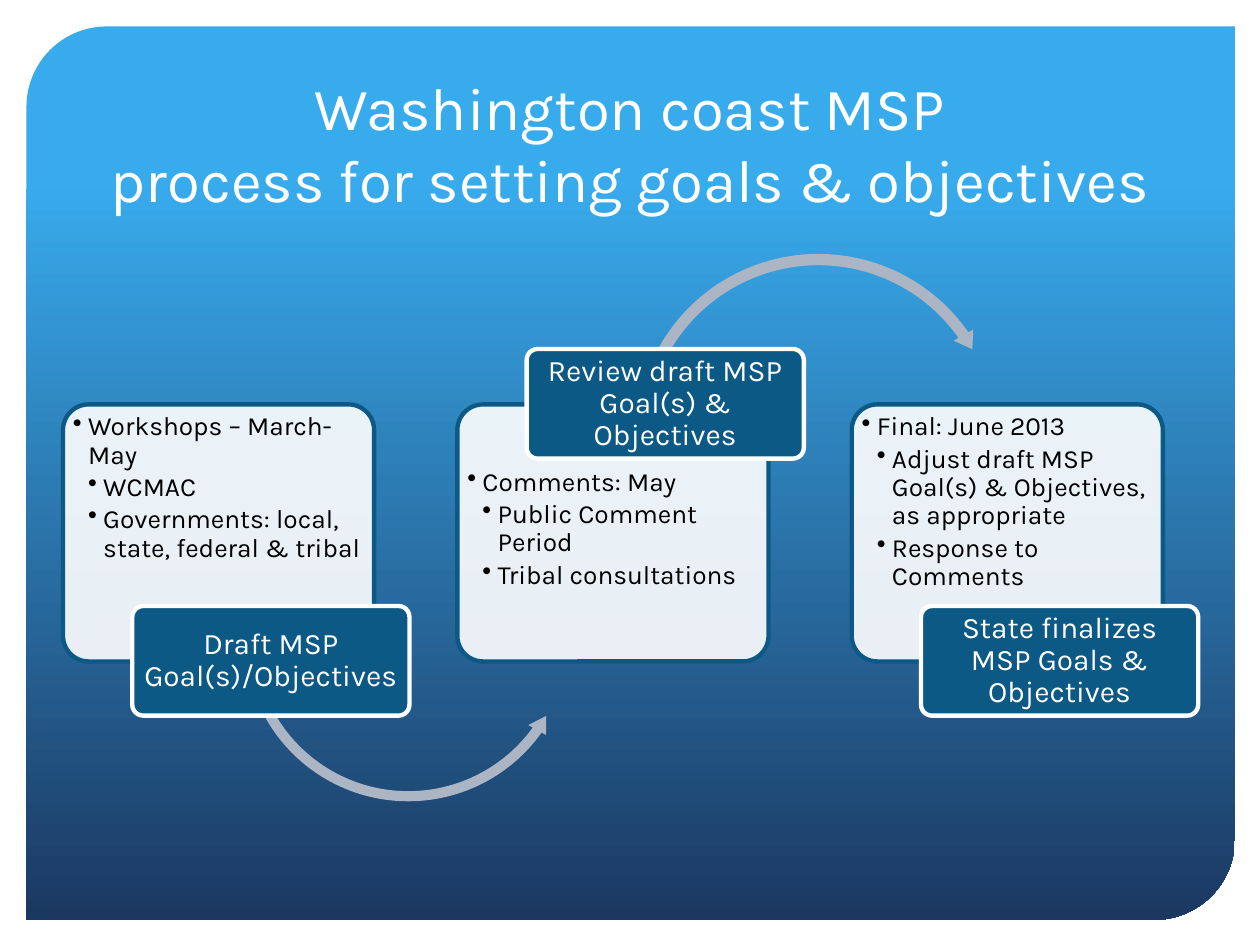
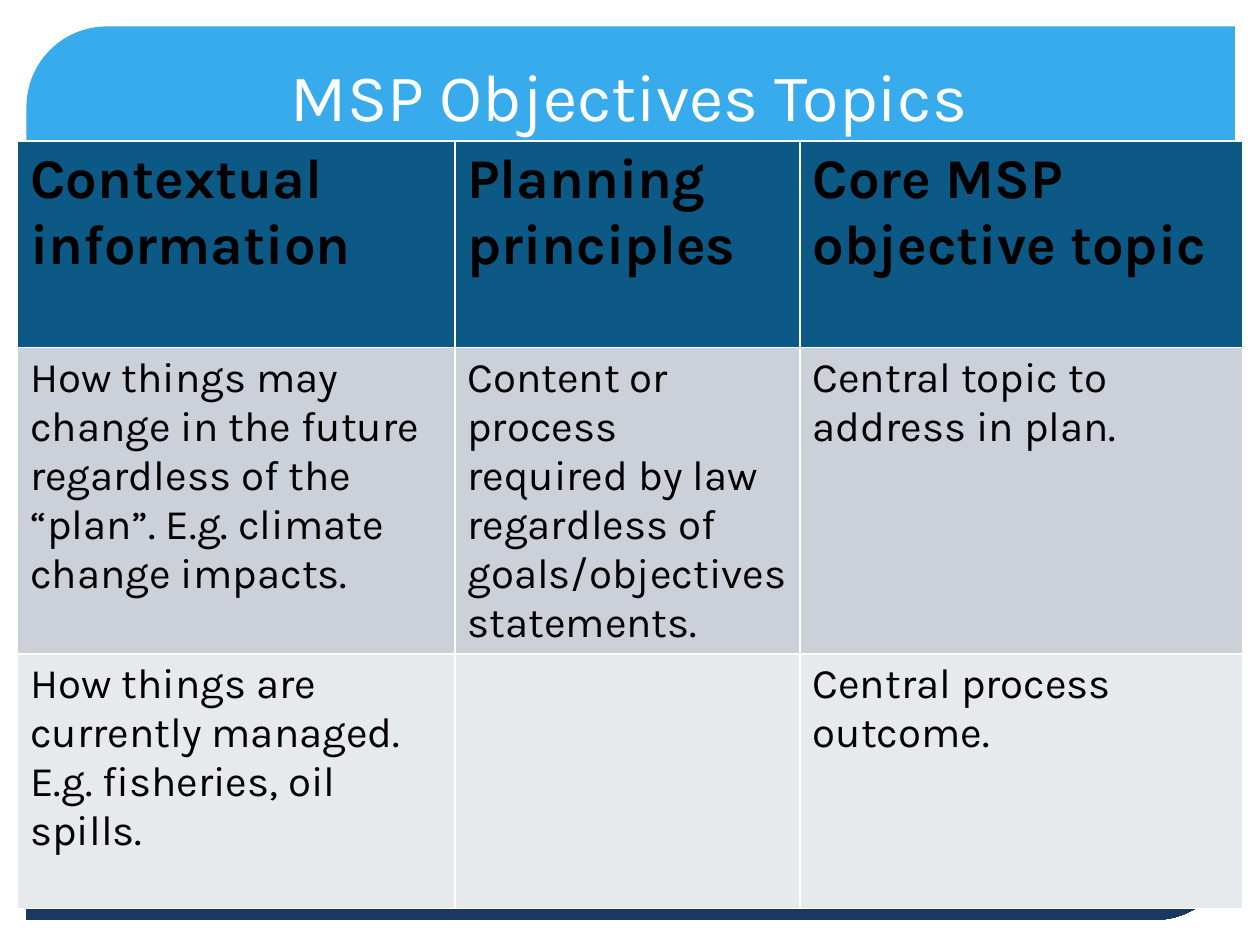
from pptx import Presentation
from pptx.dml.color import RGBColor
from pptx.enum.shapes import MSO_SHAPE
from pptx.enum.text import MSO_ANCHOR, MSO_AUTO_SIZE, PP_ALIGN
from pptx.oxml.ns import qn
from pptx.util import Pt
from lxml import etree

PX = 9144  # one px is a hundredth of an inch
FONT = "Karla"
WHITE = RGBColor(0xFF, 0xFF, 0xFF)
BLACK = RGBColor(0x00, 0x00, 0x00)
SKY = RGBColor(0x38, 0xAB, 0xED)
NAVY = RGBColor(0x1B, 0x38, 0x61)
TEAL = RGBColor(0x0C, 0x59, 0x86)
ARROW_GREY = RGBColor(0xAB, 0xB5, 0xC3)
ROW_DARK = RGBColor(0xCC, 0xD1, 0xD9)
ROW_LIGHT = RGBColor(0xE7, 0xEA, 0xED)

ROUNDED = MSO_SHAPE.ROUNDED_RECTANGLE
DIAGONAL_ROUNDED = MSO_SHAPE.ROUND_2_DIAG_RECTANGLE
LEFT_ARC = MSO_SHAPE.LEFT_CIRCULAR_ARROW
RIGHT_ARC = MSO_SHAPE.CIRCULAR_ARROW
TOP, MIDDLE, BOTTOM = MSO_ANCHOR.TOP, MSO_ANCHOR.MIDDLE, MSO_ANCHOR.BOTTOM
LEFT, CENTER = PP_ALIGN.LEFT, PP_ALIGN.CENTER
NO_AUTOFIT = MSO_AUTO_SIZE.NONE


def format_text(paragraph, size, color, bold=False, **layout):
    for name, value in layout.items():
        setattr(paragraph, name, value)
    font = paragraph.font
    for name, value in {"name": FONT, "size": Pt(size), "bold": bold}.items():
        setattr(font, name, value)
    font.color.rgb = color


def add_shape(slide, preset, box, adjustments, fill, line=None):
    shape = slide.shapes.add_shape(preset, *(n * PX for n in box))
    shape.shadow.inherit = False
    for index, value in enumerate(adjustments):
        shape.adjustments[index] = value
    shape.fill.solid()
    shape.fill.fore_color.rgb = fill
    if line is None:
        shape.line.fill.background()
    else:
        shape.line.color.rgb = line
        shape.line.width = Pt(2.5)
    return shape


prs = Presentation()
prs.slide_width, prs.slide_height = 1000 * PX, 750 * PX
title_only = prs.slide_layouts[5]

# Slides and their titles
titles = [
    ("Washington coast MSP\vprocess for setting goals & objectives", (50, 17, 900, 158), 34.2),
    ("MSP Objectives Topics", (85, 15, 829, 97), 38),
]
for heading, box, size in titles:
    title = prs.slides.add_slide(title_only).shapes.title
    for name, value in zip(("left", "top", "width", "height"), box):
        setattr(title, name, value * PX)
    title.text = heading
    frame_format = {"auto_size": NO_AUTOFIT, "vertical_anchor": BOTTOM, "word_wrap": True}
    for name, value in frame_format.items():
        setattr(title.text_frame, name, value)
    format_text(title.text_frame.paragraphs[0], size, WHITE, alignment=CENTER)
process_slide, topics_slide = prs.slides

# Gradient panel, moved to the master so that both slides share it
panel = add_shape(process_slide, DIAGONAL_ROUNDED, (21, 21, 959, 709), (0.09, 0), SKY)
panel.fill.gradient()
panel.fill.gradient_angle = 270
for stop, position, color in zip(panel.fill.gradient_stops, (0.17, 1), (SKY, NAVY)):
    stop.position = position
    stop.color.rgb = color
prs.slide_master.shapes.element.insert(2, panel.element)

# Process steps: card with bullets, arrow to the next step, label
steps = [
    ("Draft MSP Goal(s)/Objectives",
     ["Workshops – March-May", "WCMAC", "Governments: local, state, federal & tribal"],
     (LEFT_ARC, (190, 372, 268, 268), (0.03, 3.64, 21.39, 90.25, 0.03))),
    ("Review draft MSP Goal(s) & Objectives",
     ["Comments: May", "Public Comment Period", "Tribal consultations"],
     (RIGHT_ARC, (500, 197, 299, 299), (0.03, 3.23, 195.02, 125.76, 0.03))),
    ("State finalizes MSP Goals & Objectives",
     ["Final: June 2013", "Adjust draft MSP Goal(s) & Objectives, as appropriate",
      "Response to Comments"],
     None),
]
STEP_PITCH = 313
BULLET_INDENT = 12
for number, (label_text, points, arrow) in enumerate(steps):
    card_left = 50 + number * STEP_PITCH
    label_on_top = number % 2 == 1

    card = add_shape(process_slide, ROUNDED, (card_left, 321, 247, 204), (0.1,), WHITE, TEAL)
    card_color = next(card.element.iter(qn("a:srgbClr")))
    etree.SubElement(card_color, qn("a:alpha"), val="90000")
    frame = card.text_frame
    card_format = {
        "word_wrap": True, "vertical_anchor": TOP, "margin_left": 2 * PX,
        "margin_right": PX, "margin_top": (45 if label_on_top else 1) * PX, "margin_bottom": 0,
    }
    for name, value in card_format.items():
        setattr(frame, name, value)
    frame.text = "\n".join(points)
    for index, paragraph in enumerate(frame.paragraphs):
        level = min(index, 1)
        properties = paragraph._p.get_or_add_pPr()
        properties.set("marL", str((level + 1) * BULLET_INDENT * PX))
        properties.set("indent", str(-BULLET_INDENT * PX))
        etree.SubElement(properties, qn("a:buChar"), char="•")
        format_text(paragraph, 15, BLACK, level=level, alignment=LEFT,
                    line_spacing=0.9, space_after=Pt(2.25))

    if arrow:
        add_shape(process_slide, *arrow, ARROW_GREY)

    label_top = 277 if label_on_top else 481
    label = add_shape(process_slide, ROUNDED, (card_left + 55, label_top, 220, 87),
                      (0.1,), TEAL, WHITE)
    label_format = {
        "word_wrap": True, "vertical_anchor": MIDDLE, "margin_left": 4 * PX,
        "margin_right": 4 * PX, "margin_top": 2 * PX, "margin_bottom": 2 * PX,
    }
    for name, value in label_format.items():
        setattr(label.text_frame, name, value)
    label.text_frame.text = label_text
    format_text(label.text_frame.paragraphs[0], 17, WHITE, alignment=CENTER, line_spacing=0.9)

# Table of objective topics
topic_rows = [
    ["Contextual information", "Planning principles", "Core MSP objective topic"],
    ["How things may change in the future regardless of the “plan”. "
     "E.g. climate change impacts.",
     "Content or process required by law regardless of goals/objectives statements.",
     "Central topic to address in plan."],
    ["How things are currently managed.\nE.g. fisheries, oil spills.", "",
     "Central process outcome."],
]
column_widths = (347, 274, 351)
row_heights = (164, 241, 202)
row_formats = [(TEAL, 32, True), (ROW_DARK, 24, False), (ROW_LIGHT, 24, False)]
topics = topics_slide.shapes.add_table(
    3, 3, 14 * PX, 112 * PX, sum(column_widths) * PX, sum(row_heights) * PX).table
for column, width in zip(topics.columns, column_widths):
    column.width = width * PX
for row, height, texts, (fill, size, bold) in zip(
        topics.rows, row_heights, topic_rows, row_formats):
    row.height = height * PX
    for cell, text in zip(row.cells, texts):
        cell.fill.solid()
        cell.fill.fore_color.rgb = fill
        cell.text = text
        for paragraph in cell.text_frame.paragraphs:
            format_text(paragraph, size, BLACK, bold)

prs.save("out.pptx")
